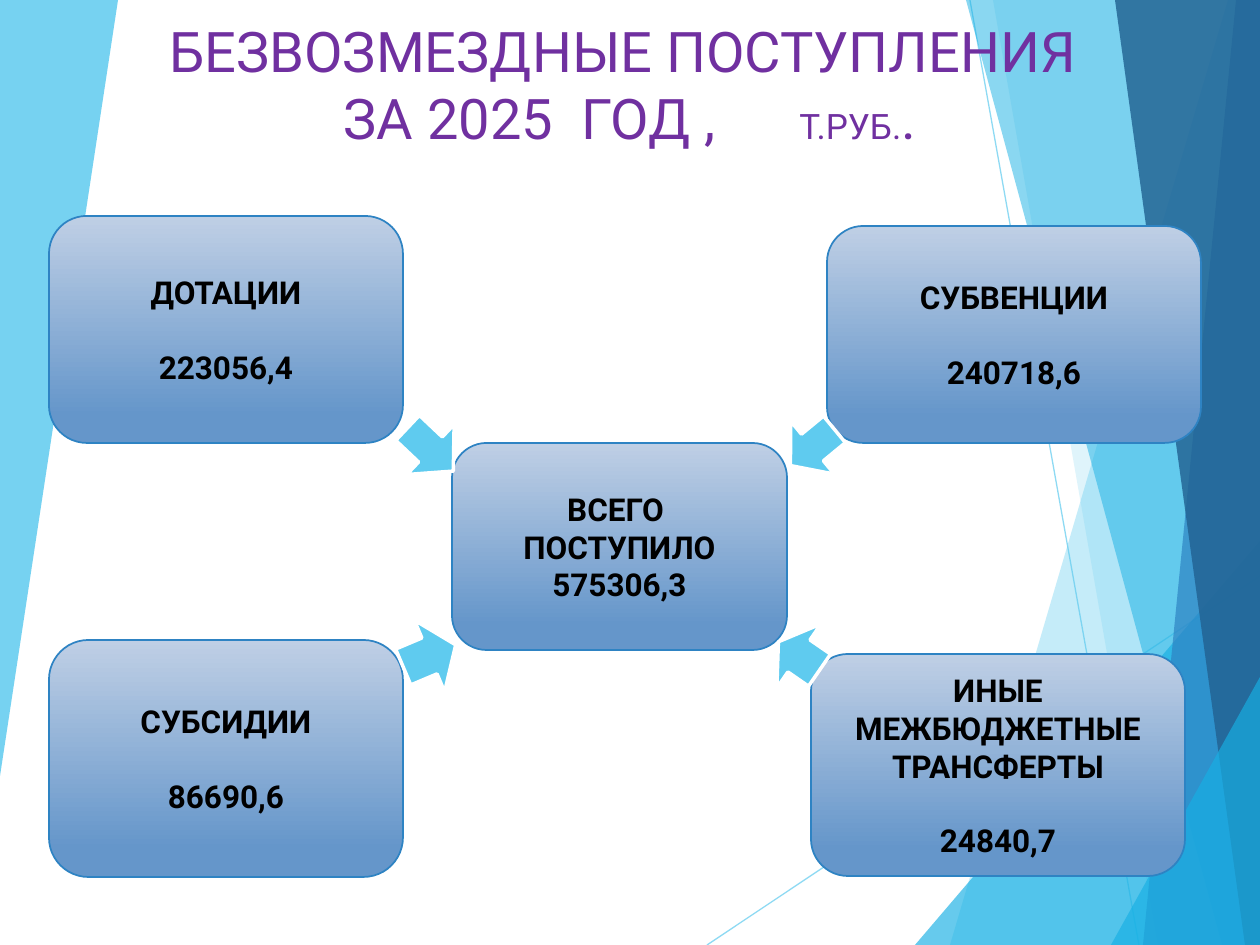
import pptx
import pptx.util
import pptx.dml.color
import pptx.enum.shapes
import pptx.enum.text
import pptx.oxml.ns
from lxml import etree

SCALE = 914400 / 126
WIDTH, HEIGHT = 1260, 945
FONT = "Roboto"
SHAPES = pptx.enum.shapes.MSO_SHAPE
CENTER = pptx.enum.text.PP_ALIGN.CENTER

COLORS = {
    "sky": "5FCBEF", "cyan": "17B0E4", "blue": "2E83C3", "navy": "226292",
    "box_top": "BFCFE5", "box_bottom": "6596CA",
    "title": "7030A0", "text": "000000", "white": "FFFFFF",
}

RAYS = [((707, 945), (1260, 576)), ((970, 0), (1139, 945))]

FACETS = [
    ("sky", 36, [(1228, 0), (950, 945), (1260, 945), (1260, 0)]),
    ("sky", 20, [(993, 0), (1158, 945), (1260, 945), (1260, 0)]),
    ("cyan", 66, [(915, 945), (1260, 541), (1260, 945)]),
    ("cyan", 50, [(966, 0), (1222, 945), (1260, 945), (1260, 0)]),
    ("blue", 70, [(1236, 0), (1143, 945), (1260, 945), (1260, 0)]),
    ("navy", 82, [(1115, 0), (1245, 945), (1260, 945), (1260, 0)]),
    ("cyan", 66, [(1111, 945), (1260, 677), (1260, 945)]),
    ("sky", 85, [(0, 0), (118, 0), (0, 776)]),
]

TITLE_RUNS = [
    ("БЕЗВОЗМЕЗДНЫЕ ПОСТУПЛЕНИЯ \vЗА 2025  ГОД ,", 32, 0),
    (" ", 32, 40),
    ("Т.РУБ.", 20, 0),
    (".", 32, 0),
]

BOXES = [
    ((49, 216, 354, 227), ["ДОТАЦИИ", "223056,4"], 21),
    ((827, 226, 374, 217), ["СУБВЕНЦИИ", "240718,6"], 21),
    ((49, 640, 354, 237), ["СУБСИДИИ", "86690,6"], 21),
    ((811, 654, 374, 222), ["ИНЫЕ МЕЖБЮДЖЕТНЫЕ ТРАНСФЕРТЫ", "24840,7"], 21),
    ((452, 443, 335, 207), ["ВСЕГО ", "ПОСТУПИЛО", "575306,3"], 0),
]

ARROWS = [
    (SHAPES.DOWN_ARROW, (396, 418, 69, 63), 313.4),
    (SHAPES.LEFT_ARROW, (784, 413, 57, 69), 320.5),
    (SHAPES.LEFT_ARROW, (774, 617, 50, 78), 34.6),
    (SHAPES.RIGHT_ARROW, (401, 617, 57, 78), 337.1),
]


def px(*values):
    return [round(value * SCALE) for value in values]


def color(name):
    return pptx.dml.color.RGBColor.from_string(COLORS[name])


def set_opacity(shape, percent):
    for element in shape._element.spPr.xpath(".//a:srgbClr"):
        alpha = etree.SubElement(element, pptx.oxml.ns.qn("a:alpha"))
        alpha.set("val", str(percent * 1000))


def set_line(shape, name, points):
    shape.line.color.rgb = color(name)
    shape.line.width = pptx.util.Pt(points)


def set_fill(shape, name):
    shape.fill.solid()
    shape.fill.fore_color.rgb = color(name)


def set_font(font, size, name, bold=False):
    font.name = FONT
    font.size = pptx.util.Pt(size)
    font.bold = bold
    font.color.rgb = color(name)


def add_ray(slide, start, end):
    ray = slide.shapes.add_connector(
        pptx.enum.shapes.MSO_CONNECTOR.STRAIGHT, *px(*start, *end))
    set_line(ray, "sky", 0.75)
    set_opacity(ray, 70)
    etree.SubElement(ray._element.spPr, pptx.oxml.ns.qn("a:effectLst"))


def add_facet(slide, name, opacity, points):
    builder = slide.shapes.build_freeform(*points[0], scale=SCALE)
    builder.add_line_segments(points[1:], close=True)
    facet = builder.convert_to_shape()
    facet.shadow.inherit = False
    set_fill(facet, name)
    set_opacity(facet, opacity)
    facet.line.fill.background()


def fill_title(title):
    title.left, title.top, title.width, title.height = px(0, 0, WIDTH, 157)
    frame = title.text_frame
    frame.word_wrap = True
    frame.auto_size = pptx.enum.text.MSO_AUTO_SIZE.NONE
    frame.vertical_anchor = pptx.enum.text.MSO_ANCHOR.BOTTOM
    paragraph = frame.paragraphs[0]
    paragraph.alignment = CENTER
    for text, size, spacing in TITLE_RUNS:
        first, *rest = text.split("\v")
        for index, part in enumerate([first, *rest]):
            if index:
                paragraph.add_line_break()
            run = paragraph.add_run()
            run.text = part
            set_font(run.font, size, "title")
            if spacing:
                run._r.get_or_add_rPr().set("spc", str(spacing * 100))


def add_box(slide, bounds, lines, gap):
    box = slide.shapes.add_shape(SHAPES.ROUNDED_RECTANGLE, *px(*bounds))
    box.shadow.inherit = False
    box.fill.gradient()
    box.fill.gradient_angle = 270
    stops = [("box_top", 0), ("box_bottom", 0.88)]
    for stop, (name, position) in zip(box.fill.gradient_stops, stops):
        stop.color.rgb = color(name)
        stop.position = position
    set_line(box, "blue", 1)
    frame = box.text_frame
    frame.word_wrap = True
    frame.vertical_anchor = pptx.enum.text.MSO_ANCHOR.MIDDLE
    frame.text = "\n".join(lines)
    for index, paragraph in enumerate(frame.paragraphs):
        paragraph.alignment = CENTER
        if index and gap:
            paragraph.space_before = pptx.util.Pt(gap)
        set_font(paragraph.runs[0].font, 18, "text", True)


def add_arrow(slide, kind, bounds, rotation):
    arrow = slide.shapes.add_shape(kind, *px(*bounds))
    arrow.shadow.inherit = False
    arrow.rotation = rotation
    set_fill(arrow, "sky")
    set_line(arrow, "white", 2)


def main():
    presentation = pptx.Presentation()
    presentation.slide_width, presentation.slide_height = px(WIDTH, HEIGHT)
    slide = presentation.slides.add_slide(presentation.slide_layouts[5])
    for ray in RAYS:
        add_ray(slide, *ray)
    for facet in FACETS:
        add_facet(slide, *facet)
    title = slide.shapes.title
    fill_title(title)
    slide.shapes._spTree.append(title._element)
    for box in BOXES:
        add_box(slide, *box)
    for arrow in ARROWS:
        add_arrow(slide, *arrow)
    presentation.save("out.pptx")


if __name__ == "__main__":
    main()
